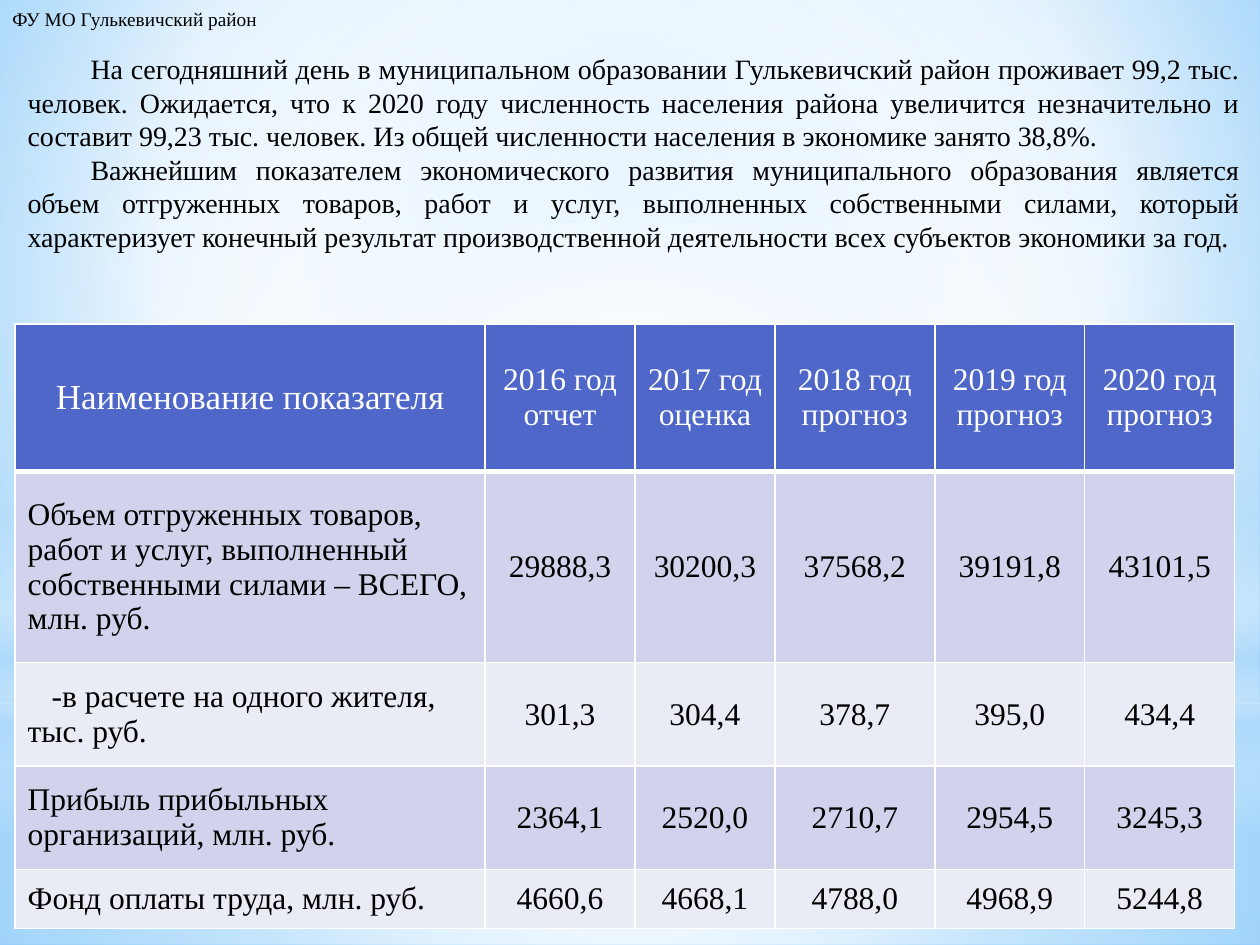
from dataclasses import dataclass

from lxml import etree
from pptx import Presentation
from pptx.dml.color import RGBColor
from pptx.enum.shapes import MSO_SHAPE as Shape
from pptx.enum.text import MSO_ANCHOR as Anchor, PP_ALIGN as Align
from pptx.oxml.ns import qn
from pptx.util import Inches, Pt

BLACK = RGBColor(0x00, 0x00, 0x00)
WHITE = RGBColor(0xFF, 0xFF, 0xFF)
HEAD = RGBColor(0x4E, 0x67, 0xC8)
ODD = RGBColor(0xD0, 0xD3, 0xEB)
EVEN = RGBColor(0xE9, 0xEB, 0xF5)
SKY = RGBColor(0xB4, 0xDC, 0xFA)
PALE = RGBColor(0x9E, 0xD5, 0xFF)
BLUE = RGBColor(0x5B, 0xB9, 0xFF)
SERIF = "Times New Roman"
MID = (50, 50, 50, 50)


@dataclass
class Stop:
    pos: int
    color: RGBColor
    alpha: int = 100


@dataclass
class Layer:
    kind: Shape
    top: float
    height: float
    stops: list[Stop]
    focus: tuple | None = MID  # None means a vertical gradient


@dataclass
class Row:
    height: float
    name: str
    values: list[str]
    indent: float = 0


LAYERS = [
    Layer(Shape.RECTANGLE, 5.58, 1.92,
          [Stop(0, WHITE, 91), Stop(37, WHITE, 76), Stop(100, SKY, 79)]),
    Layer(Shape.RECTANGLE, 0, 5.58,
          [Stop(0, WHITE, 89), Stop(48, WHITE, 62), Stop(100, SKY, 79)]),
    Layer(Shape.RECTANGLE, 4.12, 2.5,
          [Stop(0, WHITE, 0), Stop(29, WHITE, 30), Stop(45, SKY, 40),
           Stop(55, WHITE, 26), Stop(65, SKY, 60), Stop(100, WHITE, 0)], None),
    Layer(Shape.OVAL, 1.75, 5.58, [Stop(0, WHITE), Stop(56, WHITE, 0)]),
]
COLS = [3.73, 1.19, 1.11, 1.27, 1.19, 1.19]
ROWS = [
    Row(1.17, "Наименование показателя",
        ["2016 год отчет", "2017 год оценка", "2018 год прогноз",
         "2019 год прогноз", "2020 год прогноз"]),
    Row(1.52, "Объем отгруженных товаров, работ и услуг, выполненный "
        "собственными силами – ВСЕГО, млн. руб.",
        ["29888,3", "30200,3", "37568,2", "39191,8", "43101,5"]),
    Row(0.82, "-в расчете на одного жителя, тыс. руб.",
        ["301,3", "304,4", "378,7", "395,0", "434,4"], 0.19),
    Row(0.82, "Прибыль прибыльных организаций, млн. руб.",
        ["2364,1", "2520,0", "2710,7", "2954,5", "3245,3"]),
    Row(0.47, "Фонд оплаты труда, млн. руб.",
        ["4660,6", "4668,1", "4788,0", "4968,9", "5244,8"]),
]
INTRO = [
    "На сегодняшний день в муниципальном образовании Гулькевичский район "
    "проживает 99,2 тыс. человек. Ожидается, что к 2020 году численность "
    "населения района увеличится незначительно и составит 99,23 тыс. человек. "
    "Из общей численности населения в экономике занято 38,8%.",
    "Важнейшим показателем экономического развития муниципального образования "
    "является объем отгруженных товаров, работ и услуг, выполненных "
    "собственными силами, который характеризует конечный результат "
    "производственной деятельности всех субъектов экономики за год.",
]


def add(parent, tag: str, **attrs):
    return etree.SubElement(parent, qn(tag), {k: str(v) for k, v in attrs.items()})


def shade(owner, stops: list[Stop], focus: tuple | None) -> None:
    """Rewrite the gradient found inside the owner element."""
    grad = next(owner.iter(qn("a:gradFill")))
    for child in list(grad):
        grad.remove(child)
    group = add(grad, "a:gsLst")
    for stop in stops:
        mark = add(group, "a:gs", pos=stop.pos * 1000)
        color = add(mark, "a:srgbClr", val=stop.color)
        if stop.alpha < 100:
            add(color, "a:alpha", val=stop.alpha * 1000)
    if focus is None:
        add(grad, "a:lin", ang=90 * 60000, scaled=0)
    else:
        sides = {k: v * 1000 for k, v in zip("ltrb", focus)}
        add(add(grad, "a:path", path="circle"), "a:fillToRect", **sides)


def style(par, size: float, color: RGBColor, align: Align) -> None:
    par.alignment = align
    par.font.size = Pt(size)
    par.font.name = SERIF
    par.font.color.rgb = color


def add_layer(slide, layer: Layer) -> None:
    shape = slide.shapes.add_shape(
        layer.kind, 0, Inches(layer.top), Inches(10), Inches(layer.height))
    shape.shadow.inherit = False
    shape.line.fill.background()
    shape.fill.gradient()
    shade(shape.element, layer.stops, layer.focus)


def add_box(slide, left: float, top: float, width: float, height: float,
            wrap: bool):
    box = slide.shapes.add_textbox(
        Inches(left), Inches(top), Inches(width), Inches(height))
    box.text_frame.word_wrap = wrap
    return box.text_frame


def edge(cell, side: str, width: float) -> None:
    line = add(cell._tc.get_or_add_tcPr(), f"a:ln{side}", w=Pt(width))
    add(add(line, "a:solidFill"), "a:srgbClr", val=WHITE)


def fill_cell(cell, row: Row, r: int, c: int) -> None:
    head = r == 0
    for side in "LRTB":
        thick = (side == "B" and head) or (side == "T" and r == 1)
        edge(cell, side, 3 if thick else 1)
    cell.fill.solid()
    cell.fill.fore_color.rgb = HEAD if head else ODD if r % 2 else EVEN
    cell.vertical_anchor = Anchor.MIDDLE
    cell.text = [row.name, *row.values][c]
    par = cell.text_frame.paragraphs[0]
    style(par, 20 if head and c == 0 else 18, WHITE if head else BLACK,
          Align.CENTER if head or c else Align.LEFT)
    if c == 0 and row.indent:
        par._p.get_or_add_pPr().set("indent", str(Inches(row.indent)))


def add_grid(slide) -> None:
    grid = slide.shapes.add_table(
        len(ROWS), len(COLS), Inches(0.12), Inches(2.57),
        Inches(sum(COLS)), Inches(sum(row.height for row in ROWS))).table
    for col, width in zip(grid.columns, COLS):
        col.width = Inches(width)
    for r, row in enumerate(ROWS):
        grid.rows[r].height = Inches(row.height)
        for c in range(len(COLS)):
            fill_cell(grid.cell(r, c), row, r, c)


def main() -> None:
    deck = Presentation()
    deck.slide_width, deck.slide_height = Inches(10), Inches(7.5)
    slide = deck.slides.add_slide(deck.slide_layouts[6])

    # Background
    slide.background.fill.gradient()
    shade(slide.element, [Stop(0, PALE), Stop(60, WHITE), Stop(100, BLUE)],
          (20, 10, 20, 60))
    for layer in LAYERS:
        add_layer(slide, layer)

    # Introduction
    frame = add_box(slide, 0.12, 0.36, 9.82, 2.02, True)
    for i, text in enumerate(INTRO):
        par = frame.add_paragraph() if i else frame.paragraphs[0]
        par.text = "\t" + text
        style(par, 16, BLACK, Align.JUSTIFY)

    # Indicators
    add_grid(slide)

    # Department label
    label = add_box(slide, 0, 0.01, 2.18, 0.29, False).paragraphs[0]
    label.text = "ФУ МО Гулькевичский район"
    style(label, 11, BLACK, Align.LEFT)

    deck.save("out.pptx")


if __name__ == "__main__":
    main()
